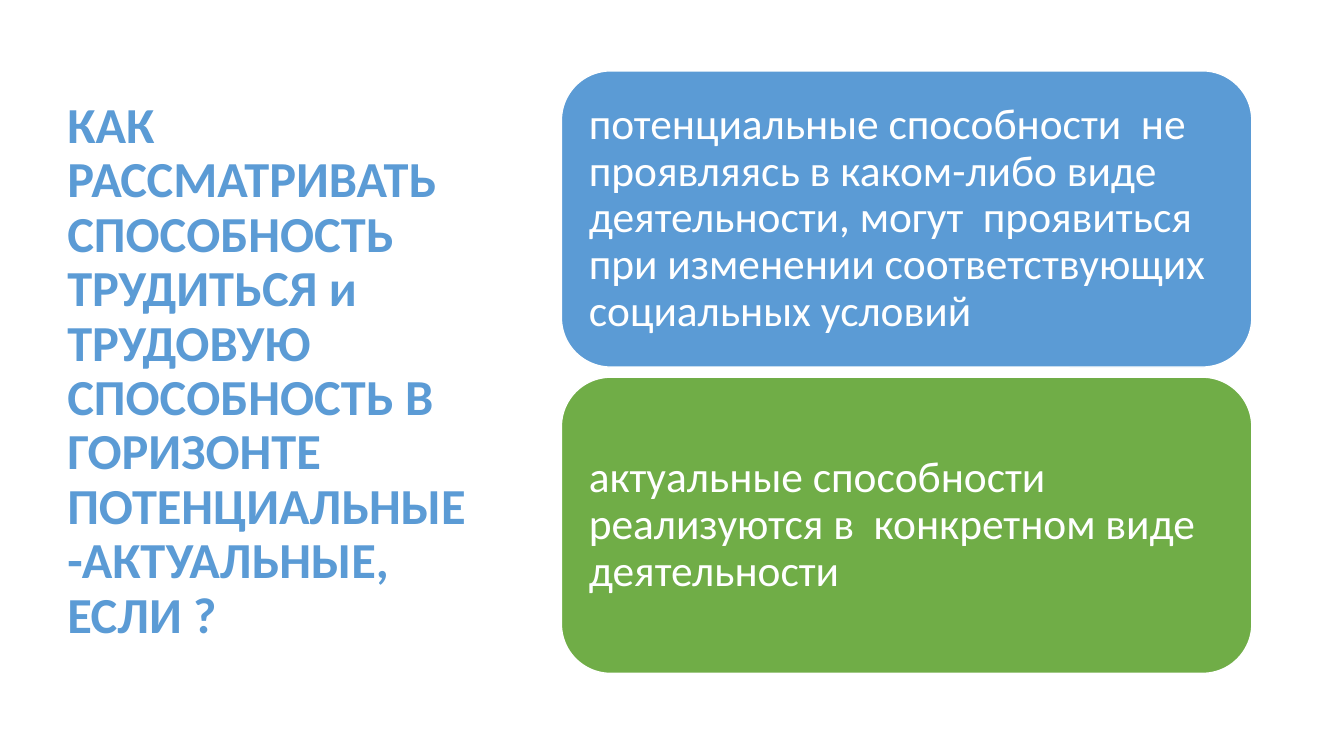
from pptx import Presentation
from pptx import util as u
from pptx.dml.color import RGBColor
from pptx.enum import shapes, text

BLUE, GREEN, WHITE = "5B9BD5", "70AD47", "FFFFFF"
CARD_LEFT, CARD_TOP, CARD_WIDTH, CARD_HEIGHT, CARD_GAP = 401, 50.6, 493.2, 211.6, 7.2
QUESTION = (
    "КАК РАССМАТРИВАТЬ СПОСОБНОСТЬ ТРУДИТЬСЯ и ТРУДОВУЮ СПОСОБНОСТЬ "
    "В ГОРИЗОНТЕ ПОТЕНЦИАЛЬНЫЕ-АКТУАЛЬНЫЕ, ЕСЛИ ?"
)
ABILITIES = [
    ("потенциальные способности  не проявляясь в каком-либо виде деятельности, "
     "могут  проявиться при изменении соответствующих социальных условий", BLUE),
    ("актуальные способности реализуются в  конкретном виде деятельности", GREEN),
]


def color(value):
    """Return the colour for a hex string."""
    return RGBColor.from_string(value)


def write(shape, content, *, size, fill, bold=False, inset=(7.2, 3.6)):
    """Put formatted, vertically centred text into a shape."""
    frame = shape.text_frame
    frame.word_wrap = True
    frame.vertical_anchor = text.MSO_ANCHOR.MIDDLE
    frame.margin_left = frame.margin_right = u.Pt(inset[0])
    frame.margin_top = frame.margin_bottom = u.Pt(inset[1])
    paragraph = frame.paragraphs[0]
    paragraph.alignment = text.PP_ALIGN.LEFT
    paragraph.line_spacing = 0.9
    run = paragraph.add_run()
    run.text = content
    run.font.name = "Calibri"
    run.font.size = u.Pt(size)
    run.font.bold = bold
    run.font.color.rgb = color(fill)


def add_title(slide, content):
    """Add the question on the left."""
    box = slide.shapes.add_textbox(u.Pt(41), u.Pt(49), u.Pt(299.5), u.Pt(433.4))
    write(box, content, size=36, fill=BLUE, bold=True)


def add_card(slide, top, content, fill):
    """Add a rounded card with its text."""
    card = slide.shapes.add_shape(
        shapes.MSO_SHAPE.ROUNDED_RECTANGLE,
        u.Pt(CARD_LEFT), u.Pt(top), u.Pt(CARD_WIDTH), u.Pt(CARD_HEIGHT),
    )
    card.shadow.inherit = False
    card.fill.solid()
    card.fill.fore_color.rgb = color(fill)
    card.line.color.rgb = color(WHITE)
    card.line.width = u.Pt(1)
    write(card, content, size=31, fill=WHITE, inset=(9.3, 9.3))


def main():
    """Build and save the slide."""
    presentation = Presentation()
    presentation.slide_width = u.Pt(960)
    presentation.slide_height = u.Pt(540)
    slide = presentation.slides.add_slide(presentation.slide_layouts[6])
    add_title(slide, QUESTION)
    for index, (content, fill) in enumerate(ABILITIES):
        add_card(slide, CARD_TOP + index * (CARD_HEIGHT + CARD_GAP), content, fill)
    presentation.save("out.pptx")


if __name__ == "__main__":
    main()
